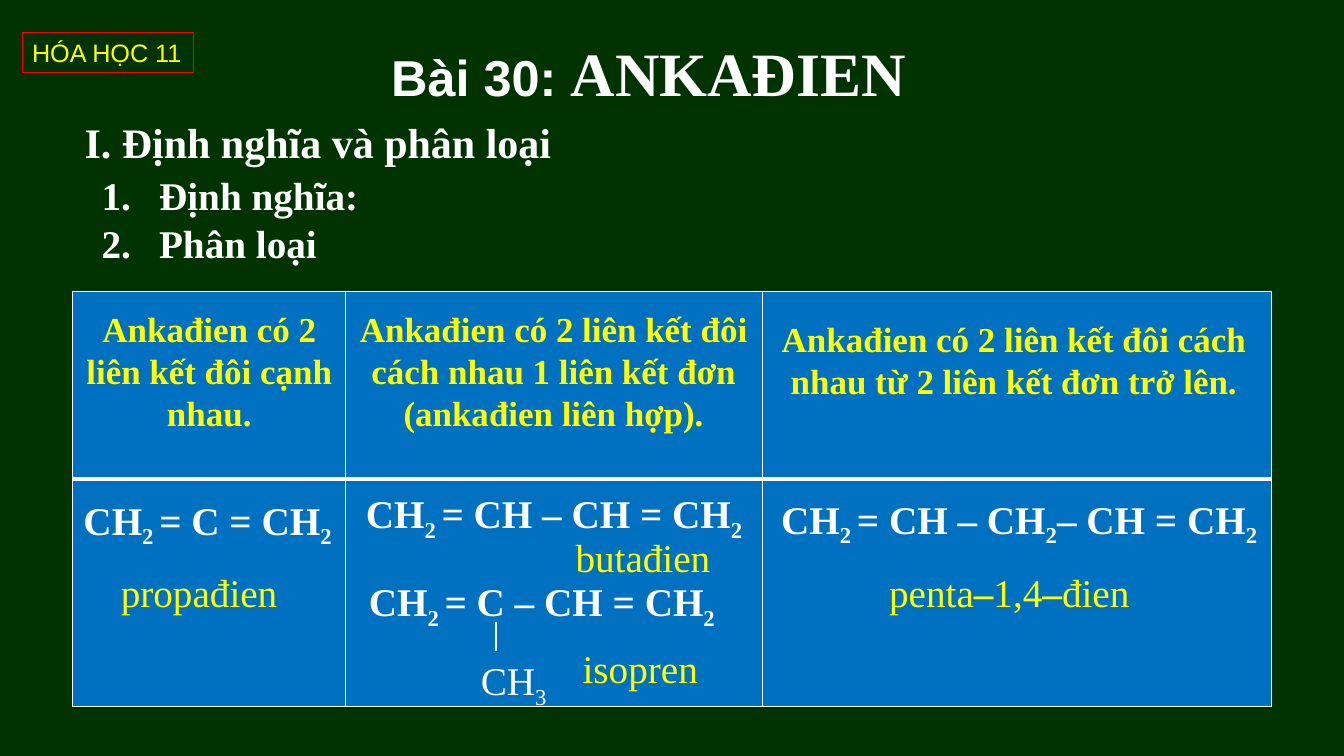
from lxml.etree import SubElement
from pptx import Presentation
from pptx.dml.color import RGBColor
from pptx.enum.shapes import MSO_CONNECTOR, MSO_SHAPE
from pptx.enum.text import MSO_ANCHOR, MSO_AUTO_SIZE, PP_ALIGN
from pptx.oxml.ns import qn
from pptx.util import Inches, Pt

THEME = {
    "back": "003300", "cell": "0070C0", "white": "FFFFFF",
    "yellow": "FFFF00", "red": "FF0000",
    "sans": "Arial", "serif": "Times New Roman",
    "tag": 18, "header": 25, "body": 28, "section": 30, "lesson": 36, "title": 44,
}

# Positions are (left, top, width, height) in inches.
TAG = ("HÓA HỌC 11", (0.22, 0.32, 1.7, 0.4))
TITLE = [("Bài 30: ", {"font": THEME["sans"], "size": THEME["lesson"]}),
         ("ANKAĐIEN", {"size": THEME["title"]})]
TITLE_BOX = (3.78, 0.3, 5.36, 0.84)
SECTION = ("I. Định nghĩa và phân loại", (0.74, 1.11, 4.87, 0.61))
TOPICS = ["Định nghĩa:", "Phân loại"]
TOPIC_BOX, TOPIC_STEP, TOPIC_INDENT = (0.91, 1.65, 2.87, 0.57), 0.48, 0.57

TABLE_LEFT, TABLE_TOP = 0.72, 2.89
COLUMNS = [2.71, 4.13, 5.05]
ROWS = [1.86, 2.26]
HEADERS = [
    (["Ankađien có 2 liên kết đôi cạnh nhau."], (0.73, 3, 2.69, 1.36)),
    (["Ankađien có 2 liên kết đôi cách nhau 1 liên kết đơn",
      "(ankađien liên hợp)."], (3.45, 3, 4.08, 1.36)),
    (["Ankađien có 2 liên kết đôi cách nhau từ 2 liên kết đơn trở lên."],
     (7.54, 3.1, 5.03, 0.94)),
]
LINE_HEIGHT = 0.57
# An underscore lowers the digit after it: (text, left, top, width)
FORMULAS = [
    ("CH_2 = C = CH_2", 0.73, 4.87, 2.83),
    ("CH_2 = CH – CH = CH_2", 3.53, 4.81, 4.12),
    ("CH_2 = C – CH = CH_2", 3.56, 5.68, 4.23),
    ("CH_2 = CH – CH_2– CH = CH_2", 7.65, 4.86, 5.26),
]
BRANCH = ("CH_3", 4.67, 6.46, 0.88)
BOND = (4.92, 6.17, 6.46)  # x, top, bottom
DASH = ("–", {"bold": True})
NAMES = [
    ("propađien", 1.1, 5.59, 2.08),
    ("butađien", 5.61, 5.24, 1.92),
    ("isopren", 5.68, 6.34, 1.55),
    ([("penta", {}), DASH, ("1,4", {}), DASH, ("đien", {})], 8.72, 5.59, 3.18),
]


def color(name):
    return RGBColor.from_string(THEME[name])


def inches(box):
    return [Inches(v) for v in box]


def formula_runs(text):
    """Split a formula into plain and subscript runs."""
    first, *rest = text.split("_")
    runs = [(first, {})]
    for part in rest:
        cut = 2 if part[1:2] == " " else 1
        runs.append((part[:cut], {"sub": True}))
        if part[cut:]:
            runs.append((part[cut:], {}))
    return runs


def add_run(p, text, size=28, font=THEME["serif"], fill="white", bold=False, sub=False):
    r = p.add_run()
    r.text = text
    r.font.size, r.font.name, r.font.bold = Pt(size), font, bold
    r.font.color.rgb = color(fill)
    if sub:
        r._r.get_or_add_rPr().set("baseline", "-25000")


def write(sp, paragraphs, align=PP_ALIGN.LEFT, **fmt):
    """Fill a shape; each paragraph is a string or a list of (text, format) runs."""
    tf = sp.text_frame
    tf.word_wrap, tf.auto_size = True, MSO_AUTO_SIZE.NONE
    tf.vertical_anchor = MSO_ANCHOR.TOP
    for i, runs in enumerate(paragraphs):
        p = tf.add_paragraph() if i else tf.paragraphs[0]
        p.alignment, p.line_spacing = align, 1.0
        for text, extra in [(runs, {})] if isinstance(runs, str) else runs:
            add_run(p, text, **{**fmt, **extra})
    return sp


def add_text(slide, box, paragraphs, **fmt):
    return write(slide.shapes.add_textbox(*inches(box)), paragraphs, **fmt)


def number(p, value, indent):
    pPr = p._p.get_or_add_pPr()
    pPr.set("marL", str(Inches(indent)))
    pPr.set("indent", str(-Inches(indent)))
    SubElement(pPr, qn("a:buFont"), typeface="+mj-lt")
    SubElement(pPr, qn("a:buAutoNum"), type="arabicPeriod", startAt=str(value))


def style_cell(cell, widths):
    """Fill a cell and draw its borders, with widths in points by side."""
    tcPr = cell._tc.get_or_add_tcPr()
    for side, width in widths.items():
        ln = SubElement(tcPr, qn(f"a:ln{side}"), w=str(Pt(width)))
        SubElement(SubElement(ln, qn("a:solidFill")), qn("a:srgbClr"), val=THEME["white"])
    cell.fill.solid()
    cell.fill.fore_color.rgb = color("cell")


def add_heading(slide):
    text, box = TAG
    tag = slide.shapes.add_shape(MSO_SHAPE.RECTANGLE, *inches(box))
    tag.shadow.inherit = False
    tag.fill.background()
    tag.line.color.rgb, tag.line.width = color("red"), Pt(0.75)
    write(tag, [text], size=THEME["tag"], font=THEME["sans"], fill="yellow")

    title = slide.shapes.title
    title.left, title.top, title.width, title.height = inches(TITLE_BOX)
    write(title, [TITLE], bold=True)
    title.text_frame.paragraphs[0].space_before = Pt(5)

    text, box = SECTION
    add_text(slide, box, [text], size=THEME["section"], bold=True)
    left, top, width, height = TOPIC_BOX
    for i, topic in enumerate(TOPICS):
        sp = add_text(slide, (left, top + i * TOPIC_STEP, width, height), [topic],
                      size=THEME["body"], bold=True)
        number(sp.text_frame.paragraphs[0], i + 1, TOPIC_INDENT)


def add_classes(slide):
    box = (TABLE_LEFT, TABLE_TOP, sum(COLUMNS), sum(ROWS))
    table = slide.shapes.add_table(len(ROWS), len(COLUMNS), *inches(box)).table
    table.horz_banding = False
    for column, width in zip(table.columns, COLUMNS):
        column.width = Inches(width)
    for i, (row, height) in enumerate(zip(table.rows, ROWS)):
        row.height = Inches(height)
        for cell in row.cells:
            style_cell(cell, {"L": 1, "R": 1, "T": 3 if i else 1, "B": 1 if i else 3})
    for lines, box in HEADERS:
        add_text(slide, box, lines, align=PP_ALIGN.CENTER, size=THEME["header"],
                 fill="yellow", bold=True)


def add_examples(slide):
    for text, *place in FORMULAS + [BRANCH]:
        add_text(slide, (*place, LINE_HEIGHT), [formula_runs(text)],
                 size=THEME["body"], bold=text != BRANCH[0])
    for name, *place in NAMES:
        add_text(slide, (*place, LINE_HEIGHT), [name], size=THEME["body"], fill="yellow")
    x, top, bottom = BOND
    bond = slide.shapes.add_connector(MSO_CONNECTOR.STRAIGHT, *inches((x, top, x, bottom)))
    bond.line.color.rgb, bond.line.width = color("white"), Pt(2)
    SubElement(bond._element.spPr, qn("a:effectLst"))


def main():
    prs = Presentation()
    prs.slide_width, prs.slide_height = Inches(13.33), Inches(7.5)
    slide = prs.slides.add_slide(prs.slide_layouts[5])
    slide.background.fill.solid()
    slide.background.fill.fore_color.rgb = color("back")
    add_heading(slide)
    add_classes(slide)
    add_examples(slide)
    prs.save("out.pptx")


if __name__ == "__main__":
    main()
